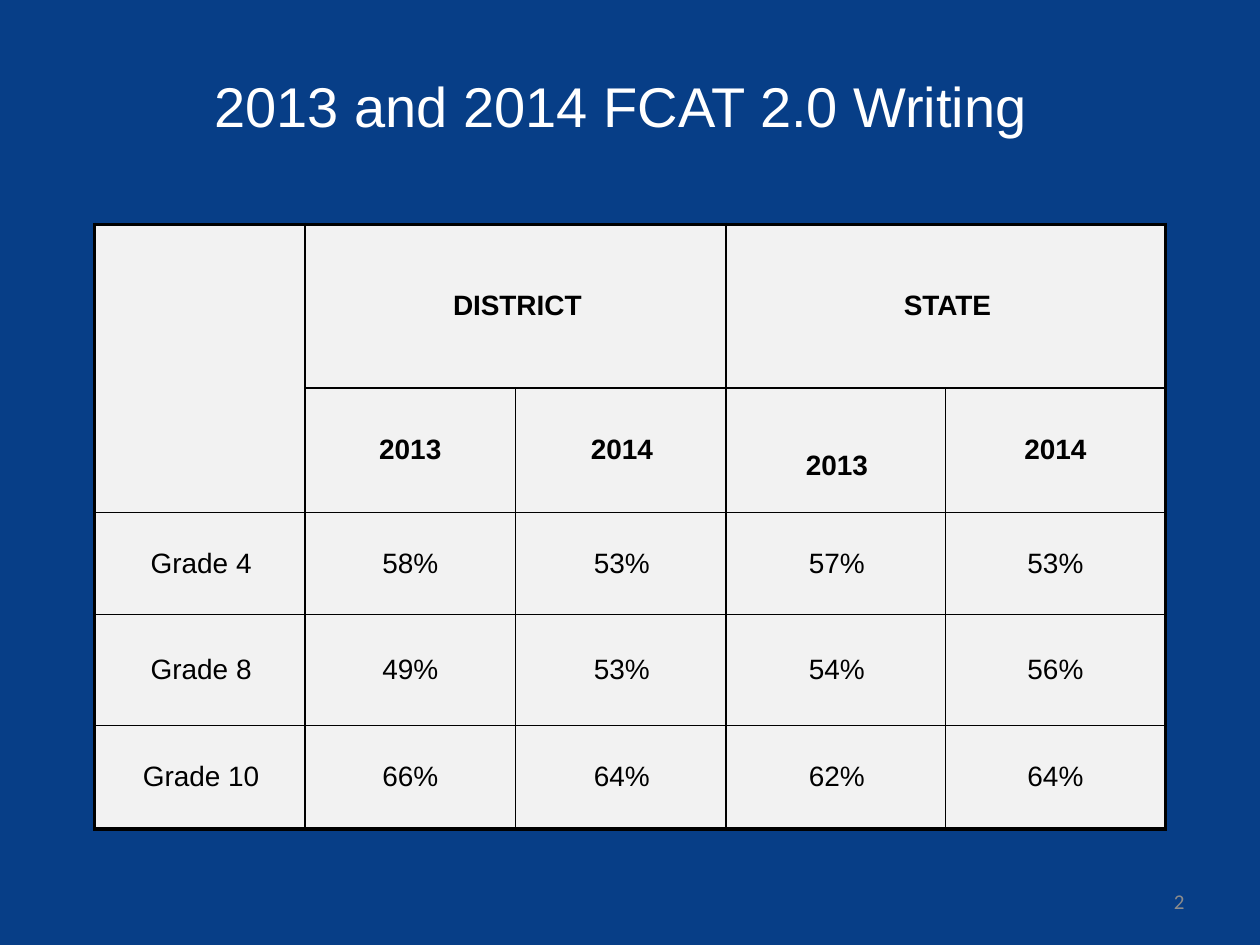
from dataclasses import dataclass
from lxml import etree
from pptx import Presentation
from pptx import util as u
from pptx.dml import color
from pptx.enum import text
from pptx.oxml import ns

# Content
TITLE = "2013 and 2014 FCAT 2.0 Writing"
PAGE_NUMBER = "2"
ROWS = [
    ["", "DISTRICT", "", "STATE", ""],
    ["", "2013", "2014", "2013", "2014"],
    ["Grade 4", "58%", "53%", "57%", "53%"],
    ["Grade 8", "49%", "53%", "54%", "56%"],
    ["Grade 10", "66%", "64%", "62%", "64%"],
]
MERGES = [(0, 0, 1, 0), (0, 1, 0, 2), (0, 3, 0, 4)]  # first row, column; last row, column
HEADER_ROWS = 2

# Measures in cm; rule widths in points, one per grid line
COLUMN_WIDTHS = [4.24, 4.24, 4.24, 4.43, 4.43]
ROW_HEIGHTS = [3.3, 2.51, 2.06, 2.24, 2.08]
COLUMN_RULES = [2.25, 1, 1, 1.5, 1, 2.25]
ROW_RULES = [2.25, 1, 1, 1, 1, 2.25]
LEFT_INSETS = [0.05, 0, 0.05, 0.05, 0]
GROUP_INSET = 0.08
LOWERED_CELL, LOWERED_INSET = (1, 3), 0.65


@dataclass(frozen=True)
class Theme:
    background: str = "073E87"
    title: str = "FFFFFF"
    cell: str = "F2F2F2"
    ink: str = "000000"
    muted: str = "8C8C8C"
    font: str = "Arial"
    number_font: str = "Calibri"
    title_size: int = 32
    table_size: int = 16
    number_size: int = 12


THEME = Theme()


def write(frame, words, size, ink, align, font=THEME.font, bold=False):
    para = frame.paragraphs[0]
    para.alignment = align
    span = para.add_run()
    span.text = words
    span.font.name, span.font.size, span.font.bold = font, u.Pt(size), bold
    span.font.color.rgb = color.RGBColor.from_string(ink)


def add_text(page, place, *style, **options):
    box = page.shapes.add_textbox(*map(u.Cm, place))
    box.text_frame.word_wrap = True
    box.text_frame.vertical_anchor = text.MSO_ANCHOR.MIDDLE
    write(box.text_frame, *style, **options)


def draw_borders(cell, region):
    top, left, bottom, right = region
    widths = {"L": COLUMN_RULES[left], "R": COLUMN_RULES[right + 1],
              "T": ROW_RULES[top], "B": ROW_RULES[bottom + 1]}
    properties = cell._tc.get_or_add_tcPr()
    for side, width in widths.items():
        line = etree.SubElement(properties, ns.qn(f"a:ln{side}"), w=str(u.Pt(width)))
        fill = etree.SubElement(line, ns.qn("a:solidFill"))
        etree.SubElement(fill, ns.qn("a:srgbClr"), val=THEME.ink)


def region_of(row, column):
    for top, left, bottom, right in MERGES:
        if top <= row <= bottom and left <= column <= right:
            return top, left, bottom, right
    return row, column, row, column


def add_scores(page):
    place = (1.91, 4.52, sum(COLUMN_WIDTHS), sum(ROW_HEIGHTS))
    table = page.shapes.add_table(len(ROWS), len(COLUMN_WIDTHS), *map(u.Cm, place)).table
    table.first_row = table.horz_banding = False
    for column, width in zip(table.columns, COLUMN_WIDTHS):
        column.width = u.Cm(width)
    for row, height in zip(table.rows, ROW_HEIGHTS):
        row.height = u.Cm(height)
    for top, left, bottom, right in MERGES:
        table.cell(top, left).merge(table.cell(bottom, right))

    for r, row in enumerate(ROWS):
        for c, words in enumerate(row):
            cell = table.cell(r, c)
            draw_borders(cell, region_of(r, c))
            cell.fill.solid()
            cell.fill.fore_color.rgb = color.RGBColor.from_string(THEME.cell)
            cell.vertical_anchor = text.MSO_ANCHOR.MIDDLE
            cell.margin_left = u.Cm(LEFT_INSETS[c] if r else GROUP_INSET)
            cell.margin_right = cell.margin_bottom = 0
            cell.margin_top = u.Cm(LOWERED_INSET if (r, c) == LOWERED_CELL else 0)
            if words:
                write(cell.text_frame, words, THEME.table_size, THEME.ink,
                      text.PP_ALIGN.CENTER, bold=r < HEADER_ROWS)


def main():
    deck = Presentation()
    deck.slide_width, deck.slide_height = u.Cm(25.4), u.Cm(19.05)
    page = deck.slides.add_slide(deck.slide_layouts[6])
    page.background.fill.solid()
    page.background.fill.fore_color.rgb = color.RGBColor.from_string(THEME.background)

    # Title, score table, page number
    add_text(page, (1.09, 0.53, 22.86, 3.18), TITLE, THEME.title_size, THEME.title,
             text.PP_ALIGN.CENTER)
    add_scores(page)
    add_text(page, (18.2, 17.65, 5.93, 1.02), PAGE_NUMBER, THEME.number_size, THEME.muted,
             text.PP_ALIGN.RIGHT, font=THEME.number_font)
    deck.save("out.pptx")


if __name__ == "__main__":
    main()
